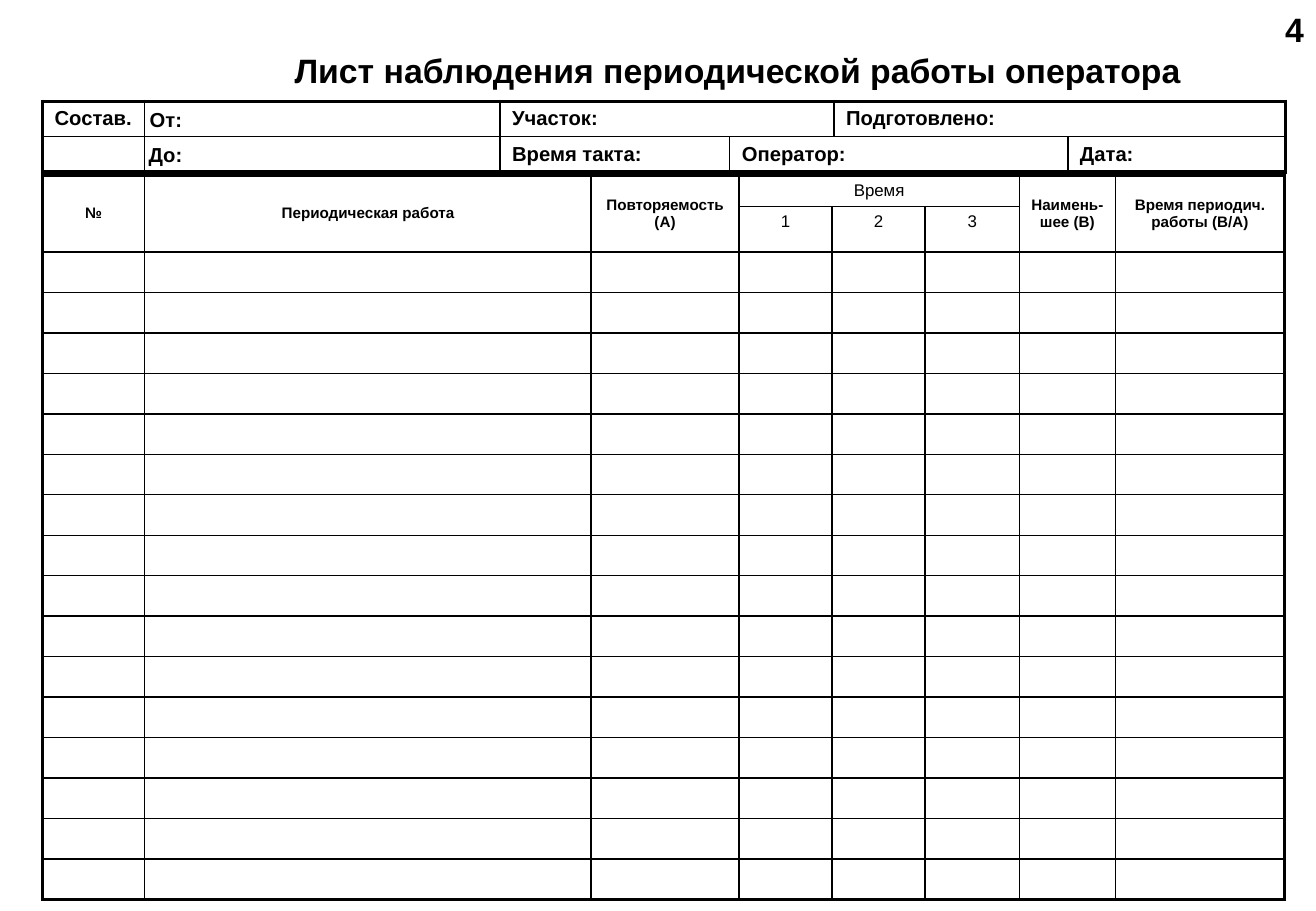
from lxml.etree import SubElement
from pptx import Presentation
from pptx.dml.color import RGBColor
from pptx.enum.text import MSO_ANCHOR, PP_ALIGN
from pptx.oxml.ns import qn
from pptx.util import Pt

SCALE = 7620  # EMU in one px, 120 px to the inch
INK = "000000"
THIN, THICK = 1, 2.25
LEFT = 42

# Text formats
TITLE = {"size": Pt(20), "bold": True}
LABEL = {"size": Pt(12), "bold": True}
HEAD = {"size": Pt(9), "bold": True}
TIME = {"size": Pt(10), "bold": False}


def px(num):
    return num * SCALE


def color(code):
    return RGBColor.from_string(code)


def write(frame, text, form, align):
    para = frame.paragraphs[0]
    para.alignment = align
    run = para.add_run()
    run.text = text
    run.font.name = "Arial"
    run.font.color.rgb = color(INK)
    for name, value in form.items():
        setattr(run.font, name, value)


def add_text(slide, area, text, form, align=PP_ALIGN.LEFT):
    frame = slide.shapes.add_textbox(*map(px, area)).text_frame
    frame.word_wrap = True
    frame.vertical_anchor = MSO_ANCHOR.MIDDLE
    write(frame, text, form, align)


def add_edge(cell, side, width):
    line = SubElement(cell._tc.get_or_add_tcPr(), qn("a:ln" + side), w=str(Pt(width)))
    fill = SubElement(line, qn("a:solidFill"))
    SubElement(fill, qn("a:srgbClr"), val=INK)


def add_grid(slide, top, cols, rows, spans):
    """Add an empty table with a thick frame and thin inner lines."""
    area = (LEFT, top, sum(cols), sum(rows))
    table = slide.shapes.add_table(len(rows), len(cols), *map(px, area)).table
    table.first_row = table.horz_banding = False
    for col, width in zip(table.columns, cols):
        col.width = px(width)
    for row, height in zip(table.rows, rows):
        row.height = px(height)
    for row, col, high, wide in spans:
        table.cell(row, col).merge(table.cell(row + high - 1, col + wide - 1))
    for r in range(len(rows)):
        for c in range(len(cols)):
            cell = table.cell(r, c)
            high, wide = 1, 1
            if cell.is_merge_origin:
                high, wide = cell.span_height, cell.span_width
            outer = {"L": c == 0, "R": c + wide == len(cols),
                     "T": r == 0, "B": r + high == len(rows)}
            for side, thick in outer.items():
                add_edge(cell, side, THICK if thick else THIN)
            cell.fill.background()
            # A low bottom margin and small empty text keep the row height
            cell.margin_bottom = px(3)
            end = cell.text_frame.paragraphs[0]._p.get_or_add_endParaRPr()
            end.set("sz", "900")
    return table


def add_info(slide):
    cols = (101, 351, 227, 103, 231, 215)
    spans = ((0, 2, 1, 2), (0, 4, 1, 2), (1, 3, 1, 2))
    table = add_grid(slide, 100, cols, (35, 35), spans)
    labels = {(0, 0): "Состав.", (0, 2): "Участок:", (0, 4): "Подготовлено:",
              (1, 2): "Время такта:", (1, 3): "Оператор:", (1, 5): "Дата:"}
    for place, text in labels.items():
        write(table.cell(*place).text_frame, text, LABEL, PP_ALIGN.LEFT)


def add_log(slide):
    cols = (101, 441, 146, 92, 92, 93, 95, 167)
    heads = {0: "№", 1: "Периодическая работа", 2: "Повторяемость (А)",
             6: "Наимень-шее (В)", 7: "Время периодич. работы (В/А)"}
    spans = [(0, col, 2, 1) for col in heads] + [(0, 3, 1, 3)]
    table = add_grid(slide, 173, cols, [31, 45] + [40] * 16, spans)
    for col, text in heads.items():
        cell = table.cell(0, col)
        cell.vertical_anchor = MSO_ANCHOR.MIDDLE
        cell.margin_top = px(3)
        if col in (2, 6):
            cell.margin_left = cell.margin_right = px(7)
        write(cell.text_frame, text, HEAD, PP_ALIGN.CENTER)
    times = {(0, 3): "Время", (1, 3): "1", (1, 4): "2", (1, 5): "3"}
    for place, text in times.items():
        write(table.cell(*place).text_frame, text, TIME, PP_ALIGN.CENTER)


def main():
    deck = Presentation()
    deck.slide_width, deck.slide_height = px(1300), px(900)
    slide = deck.slides.add_slide(deck.slide_layouts[6])

    # Title and page number
    add_text(slide, (158, 34, 1142, 70),
             "Лист наблюдения периодической работы оператора", TITLE, PP_ALIGN.CENTER)
    add_text(slide, (40, 0, 1260, 58), "4", TITLE, PP_ALIGN.RIGHT)

    # Work log and the sheet details above it
    add_log(slide)
    add_info(slide)

    # Start and end of the job
    add_text(slide, (136, 100, 90, 36), "От:", LABEL)
    add_text(slide, (135, 135, 90, 36), "До:", LABEL)

    deck.save("out.pptx")


if __name__ == "__main__":
    main()
